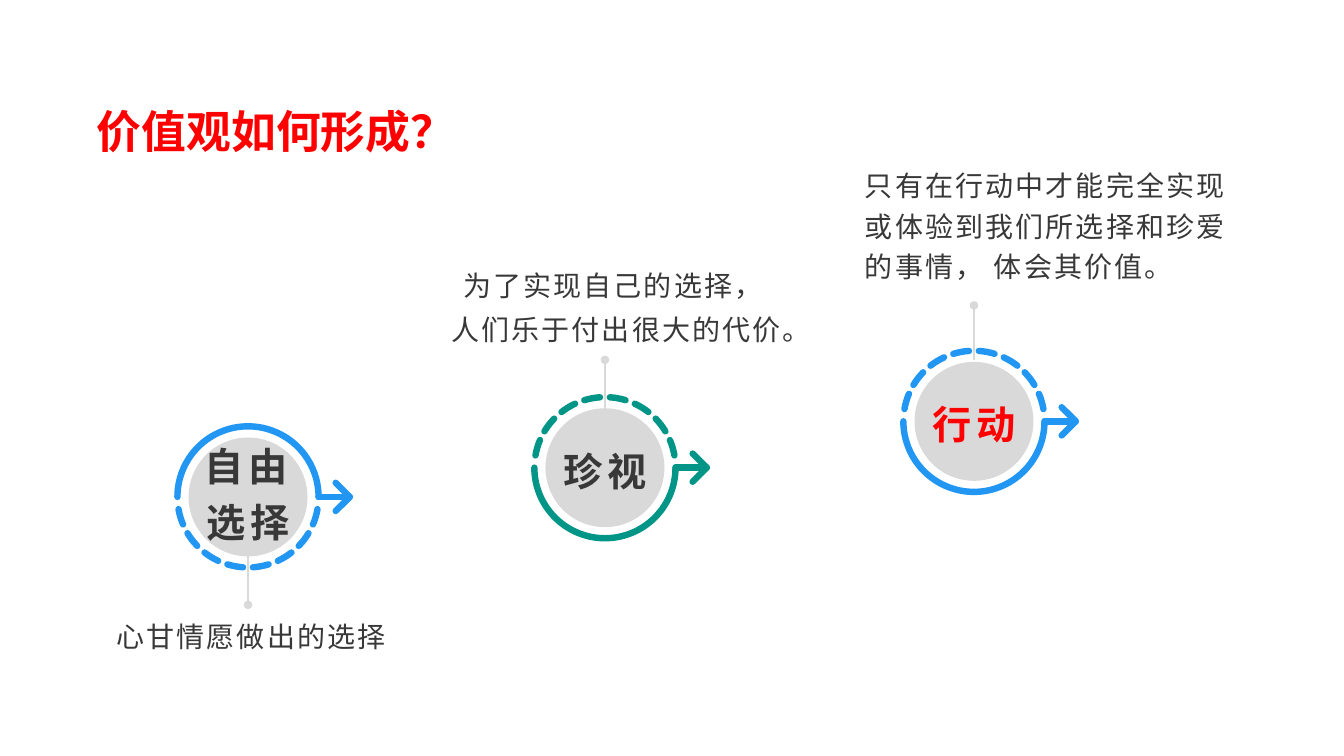
"""Build the slide on how values are formed."""
import math

from lxml import etree
from pptx import Presentation
from pptx.dml.color import RGBColor
from pptx.enum.shapes import MSO_CONNECTOR, MSO_SHAPE
from pptx.enum.text import MSO_ANCHOR, MSO_AUTO_SIZE, PP_ALIGN
from pptx.oxml.ns import qn
from pptx.util import Inches, Pt

STRAIGHT = MSO_CONNECTOR.STRAIGHT
OVAL = MSO_SHAPE.OVAL
TOP, MIDDLE, BOTTOM = MSO_ANCHOR.TOP, MSO_ANCHOR.MIDDLE, MSO_ANCHOR.BOTTOM
LEFT, CENTER = PP_ALIGN.LEFT, PP_ALIGN.CENTER
NO_AUTOFIT = MSO_AUTO_SIZE.NONE

FONT = "Noto Sans CJK SC"
COLORS = {"red": "FF0000", "text": "383838", "gray": "D9D9D9", "blue": "2196F3", "green": "009587"}

DISC_RADIUS, RING_RADIUS, RING_WIDTH = 0.59, 0.7, 4.6
DASH_COUNT, DASH_PITCH, DASH_LENGTH = 8, 21, 13
ARROW_TIP, ARROW_HEAD = 1.01, 0.14
LABEL_HEIGHT = 0.89

STEPS = [
    {"label": "自由选择", "center": (2.46, 4.93), "solid": -1, "ring": "blue",
     "label_color": "text", "label_width": 1.18, "stem": (5.47, 6),
     "lines": ["心甘情愿做出的选择"], "box": (0.86, 6.08, 3.26, 0.68),
     "format": {"align": CENTER, "spacing": 1.2, "insets": (0, 0.05)}},
    {"label": "珍视", "center": (6, 4.64), "solid": 1, "ring": "green",
     "label_color": "text", "label_width": 1.09, "stem": (4.1, 3.57),
     "lines": ["为了实现自己的选择， ", "人们乐于付出很大的代价。"], "box": (4.35, 2.18, 3.54, 1.25),
     "format": {"align": CENTER, "spacing": 1.3, "anchor": BOTTOM, "insets": (0.05, 0)}},
    {"label": "行动", "center": (9.66, 4.18), "solid": 1, "ring": "blue",
     "label_color": "red", "label_width": 1.18, "stem": (3.57, 3.03),
     "lines": ["只有在行动中才能完全实现或体验到我们所选择和珍爱的事情， 体会其价值。"],
     "box": (8.48, 1.61, 3.83, 1.2),
     "format": {"spacing": 1.2, "insets": (0, 0.05)}},
]


def color(name):
    """Return the named palette color."""
    return RGBColor.from_string(COLORS[name])


def write_text(shape, lines, size=20, fill="text", bold=False, tracking=0,
               align=LEFT, anchor=TOP, spacing=1, insets=(0.05, 0.05)):
    """Write formatted paragraphs into a shape."""
    frame = shape.text_frame
    frame.word_wrap = True
    frame.auto_size = NO_AUTOFIT
    frame.vertical_anchor = anchor
    frame.margin_left = frame.margin_right = Inches(0.1)
    frame.margin_top, frame.margin_bottom = map(Inches, insets)
    for index, line in enumerate(lines):
        paragraph = frame.add_paragraph() if index else frame.paragraphs[0]
        paragraph.alignment = align
        paragraph.line_spacing = spacing
        paragraph.space_before = Pt(0)
        run = paragraph.add_run()
        run.text = line
        run.font.size = Pt(size)
        run.font.bold = bold
        run.font.color.rgb = color(fill)
        run.font.name = FONT
        properties = run._r.get_or_add_rPr()
        properties.set("spc", str(int(tracking * 100)))
        etree.SubElement(properties, qn("a:ea")).set("typeface", FONT)


def add_text(slide, box, lines, **text_format):
    """Add a text box with formatted paragraphs."""
    shape = slide.shapes.add_textbox(*map(Inches, box))
    write_text(shape, lines, **text_format)


def arc(start, end, side):
    """Return points along the ring between two angles on one side."""
    count = max(4, round((end - start) / 3))
    angles = [math.radians(start + (end - start) * i / count) for i in range(count + 1)]
    return [(RING_RADIUS * math.cos(a), side * RING_RADIUS * math.sin(a)) for a in angles]


def add_ring(slide, center, solid, ring):
    """Draw a half-solid, half-dashed ring with an arrow on its right."""
    strokes = [
        arc(0, 180, solid),
        [(RING_RADIUS, 0), (ARROW_TIP, 0)],
        [(ARROW_TIP - ARROW_HEAD, -ARROW_HEAD), (ARROW_TIP, 0), (ARROW_TIP - ARROW_HEAD, ARROW_HEAD)],
    ]
    for index in range(DASH_COUNT):
        middle = 90 + (index - (DASH_COUNT - 1) / 2) * DASH_PITCH
        strokes.append(arc(middle - DASH_LENGTH / 2, middle + DASH_LENGTH / 2, -solid))
    strokes = [[(Inches(center[0] + x), Inches(center[1] + y)) for x, y in stroke] for stroke in strokes]
    builder = slide.shapes.build_freeform(*strokes[0][0])
    for index, stroke in enumerate(strokes):
        if index:
            builder.move_to(*stroke[0])
        builder.add_line_segments(stroke[1:], close=False)
    shape = builder.convert_to_shape()
    shape.shadow.inherit = False
    shape.fill.background()
    shape.line.color.rgb = color(ring)
    shape.line.width = Pt(RING_WIDTH)
    line = shape.line._get_or_add_ln()
    line.set("cap", "rnd")
    etree.SubElement(line, qn("a:round"))


def add_stem(slide, x, start, end):
    """Draw the dotted-end line between a ring and its text."""
    stem = slide.shapes.add_connector(STRAIGHT, *map(Inches, (x, start, x, end)))
    stem.line.color.rgb = color("gray")
    stem.line.width = Pt(2)
    etree.SubElement(stem.line._get_or_add_ln(), qn("a:tailEnd")).set("type", "oval")
    etree.SubElement(stem._element.spPr, qn("a:effectLst"))


def add_step(slide, step):
    """Place one step: disc, ring, label, stem and description."""
    x, y = step["center"]
    diameter = 2 * DISC_RADIUS
    disc = slide.shapes.add_shape(
        OVAL, *map(Inches, (x - DISC_RADIUS, y - DISC_RADIUS, diameter, diameter)))
    disc.shadow.inherit = False
    disc.fill.solid()
    disc.fill.fore_color.rgb = color("gray")
    disc.line.fill.background()
    add_ring(slide, step["center"], step["solid"], step["ring"])
    width = step["label_width"]
    label_top = y - LABEL_HEIGHT / 2 - (0.08 if step["solid"] < 0 else 0.02)
    add_text(slide, (x - width / 2, label_top, width, LABEL_HEIGHT), [step["label"]],
             size=28, fill=step["label_color"], bold=True, tracking=3,
             align=CENTER, anchor=MIDDLE, spacing=1.2)
    add_stem(slide, x, *step["stem"])
    add_text(slide, step["box"], step["lines"], tracking=1.5, **step["format"])


def add_title(slide, box, text):
    """Place and format the slide title."""
    title = slide.shapes.title
    title.left, title.top, title.width, title.height = map(Inches, box)
    write_text(title, [text], size=32, fill="red", bold=True, anchor=BOTTOM)


def main():
    """Build and save the presentation."""
    presentation = Presentation()
    presentation.slide_width = Inches(13.33)
    presentation.slide_height = Inches(7.5)
    slide = presentation.slides.add_slide(presentation.slide_layouts[5])
    add_title(slide, (0.86, 0.93, 6.58, 0.68), "价值观如何形成？")
    for step in STEPS:
        add_step(slide, step)
    presentation.save("out.pptx")


if __name__ == "__main__":
    main()
